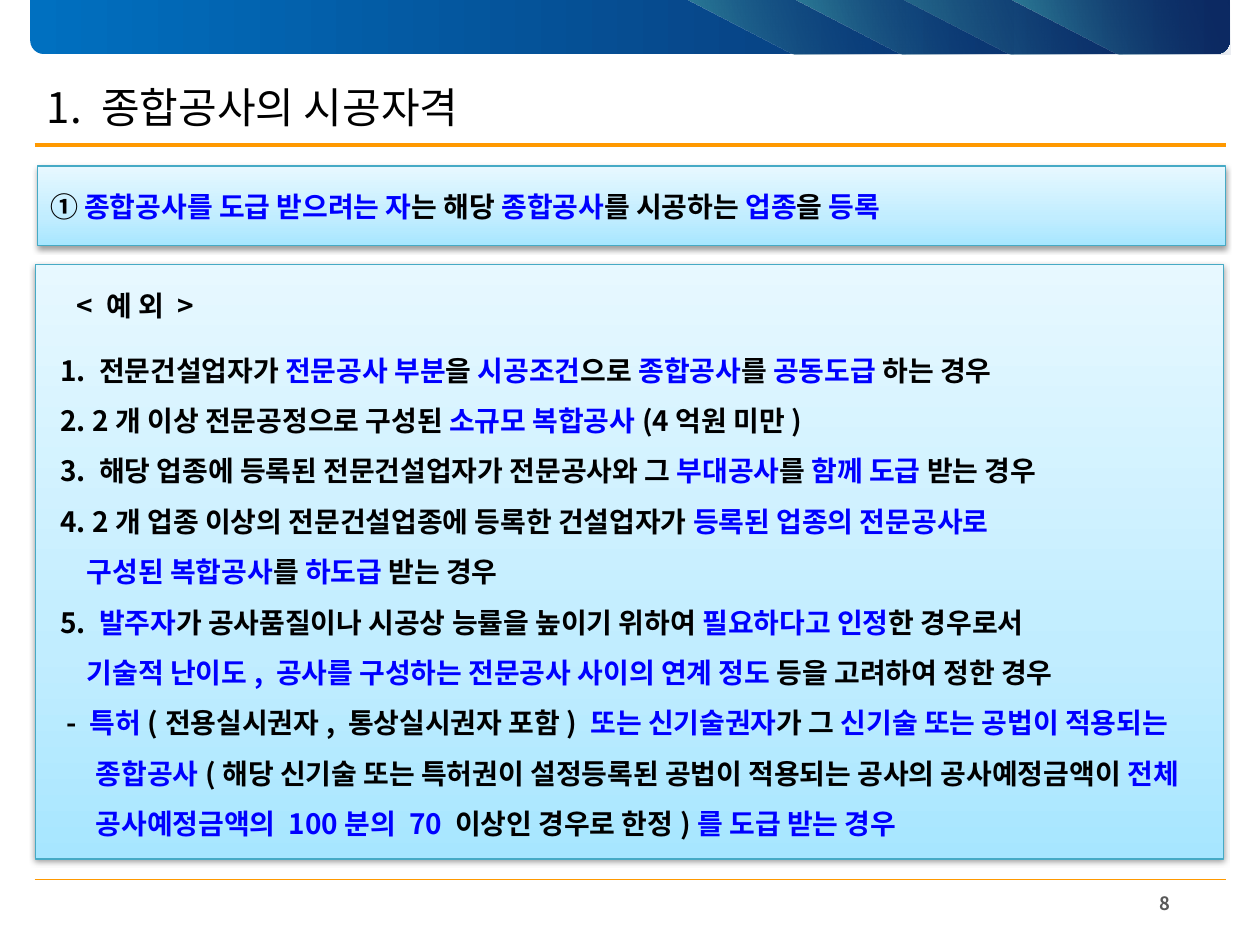
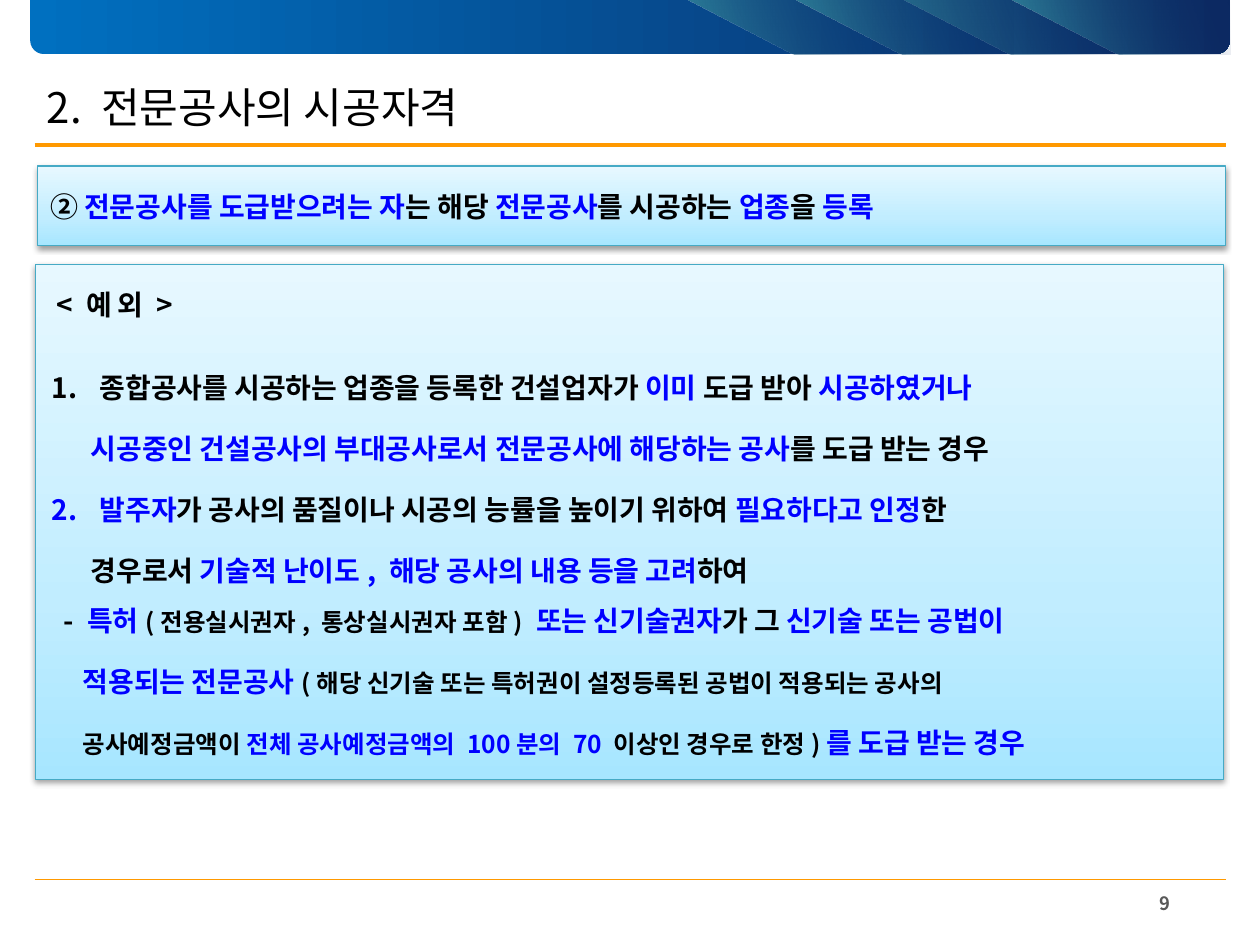
"""Build two slides on contractor qualifications, with a shared frame and text panels."""
from lxml.etree import SubElement
from pptx import Presentation
from pptx.dml.color import RGBColor
from pptx.enum.shapes import MSO_CONNECTOR, MSO_SHAPE
from pptx.enum.text import MSO_ANCHOR, MSO_AUTO_SIZE, PP_ALIGN
from pptx.oxml.ns import qn
from pptx.util import Cm, Pt

FONT = "Noto Sans CJK KR"
BLACK, BLUE, GREY, ORANGE, PANEL_EDGE = "000000", "0000FF", "595959", "FF9900", "46AAC5"
BAND_STOPS = [(0, "0070C0", 100), (100, "0C2962", 100)]
STRIPE_STOPS = [(0, "31859C", 100), (100, "0C2962", 0)]
PANEL_STOPS = [(0, "A7E6FF", 100), (35, "C1EDFF", 100), (100, "E7F8FF", 100)]

BAND_BOX = (0.61, 0, 24.18, 1.09)
STRIPE_LEFT, STRIPE_STEP, STRIPE_WIDTH = 13.84, 2.18, 4.42
STRIPE_ORDER = (0, 2, 3, 1)
RULES = [(2.92, 2), (17.73, 0.75)]
RULE_LEFT, RULE_RIGHT = 0.7, 24.71
TITLE_BOX = (0.69, 1.37, 20.24, 1.55)
HEADING_BOX = (0.76, 3.35, 23.95, 1.6)
PANEL_LEFT, PANEL_TOP, PANEL_WIDTH = 0.71, 5.33, 23.95
LABEL_SIZE = (4.19, 0.94)
NUMBER_BOX = (21.89, 17.83, 3.2, 0.74)
LINE_PITCH = 28.8

INDENTS = {
    "item": (0.26, 0),
    "number": (0.97, -0.97),
    "more": (0.79, 0),
    "dash": (0.97, -0.59),
    "short dash": (0.63, -0.38),
    "short more": (0.63, 0),
}

# "|" switches between black and blue, "^" marks a smaller run
SLIDES = [
    {
        "page": "8",
        "title": "1. 종합공사의 시공자격",
        "heading": "① |종합공사를 도급 받으려는 자|는 해당 |종합공사|를 시공하는 |업종|을 |등록",
        "label_at": (1.3, 5.69),
        "panel_height": 11.99,
        "insets": (0.25, 1.45),
        "gap": 0,
        "lines": [
            ("item", "1. 전문건설업자가 |전문공사 부분|을 |시공조건|으로 |종합공사|를 |공동도급| 하는 경우"),
            ("item", "2. 2개 이상 전문공정으로 구성된 |소규모 복합공사|(4억원 미만)"),
            ("item", "3. 해당 업종에 등록된 전문건설업자가 전문공사와 그 |부대공사|를 |함께 도급 |받는 경우"),
            ("item", "4. 2개 업종 이상의 전문건설업종에 등록한 건설업자가 |등록된 업종의 전문공사로"),
            ("more", "|구성된 복합공사|를 |하도급| 받는 경우"),
            ("item", "5. |발주자|가 공사품질이나 시공상 능률을 높이기 위하여 |필요하다고 인정|한 경우로서"),
            ("more", "|기술적 난이도, 공사를 구성하는 전문공사 사이의 연계 정도| 등을 고려하여 정한 경우"),
            ("dash", "- |특허|(전용실시권자, 통상실시권자 포함) |또는 신기술권자|가 그 "
                     "|신기술 또는 공법이 적용되는 종합공사|(해당 신기술 또는 특허권이 설정등록된 "
                     "공법이 적용되는 공사의 공사예정금액이 |전체 공사예정금액의 100분의 70 "
                     "|이상인 경우로 한정)|를 도급 받는 경우"),
        ],
    },
    {
        "page": "9",
        "title": "2. 전문공사의 시공자격",
        "heading": "② |전문공사를 도급받으려는 자|는 해당 |전문공사|를 시공하는 |업종|을 |등록",
        "label_at": (0.89, 5.66),
        "panel_height": 10.39,
        "insets": (0.33, 1.8),
        "gap": 6,
        "lines": [
            ("number", "종합공사를 시공하는 업종을 등록한 건설업자가 |이미| 도급 받아 |시공하였거나"),
            ("more", "|시공중인 건설공사의 부대공사로서 전문공사에 해당하는 공사|를 도급 받는 경우"),
            ("number", "|발주자|가 공사의 품질이나 시공의 능률을 높이기 위하여 |필요하다고 인정|한"),
            ("more", "경우로서 |기술적 난이도, 해당 공사의 내용 등을 고려|하여"),
            ("short dash", "- |특허|^(전용실시권자, 통상실시권자 포함)| 또는 신기술권자|가 그 |신기술 또는 공법이"),
            ("short more", "|적용되는 전문공사|^(해당 신기술 또는 특허권이 설정등록된 공법이 적용되는 공사의"),
            ("short more", "^공사예정금액이 |^전체 공사예정금액의 100분의 70 |^이상인 경우로 한정)|를 도급 받는 경우"),
        ],
    },
]


def rgb(value):
    return RGBColor.from_string(value)


def cm_box(box):
    return [Cm(length) for length in box]


def place(shape, box):
    shape.left, shape.top, shape.width, shape.height = cm_box(box)


def fill_gradient(shape, stops, angle):
    shape.fill.gradient()
    shape.fill.gradient_angle = angle
    stop_list = next(shape.element.spPr.iter(qn("a:gsLst")))
    for old_stop in list(stop_list):
        stop_list.remove(old_stop)
    for position, color, opacity in stops:
        stop = SubElement(stop_list, qn("a:gs"), pos=str(position * 1000))
        color_element = SubElement(stop, qn("a:srgbClr"), val=color)
        if opacity < 100:
            SubElement(color_element, qn("a:alpha"), val=str(opacity * 1000))


def style_panel(shape):
    fill_gradient(shape, PANEL_STOPS, 90)
    shape.line.color.rgb = rgb(PANEL_EDGE)
    shape.line.width = Pt(0.75)
    shape.shadow.inherit = False
    effects = shape.element.spPr.find(qn("a:effectLst"))
    shadow = SubElement(effects, qn("a:outerShdw"), blurRad=str(Pt(3.1)), dist=str(Pt(1.6)),
                        dir="5400000", rotWithShape="0")
    color_element = SubElement(shadow, qn("a:srgbClr"), val=BLACK)
    SubElement(color_element, qn("a:alpha"), val="38000")


def format_run(run, size, color=BLACK, bold=True):
    run.font.size, run.font.bold, run.font.name = Pt(size), bold, FONT
    run.font.color.rgb = rgb(color)
    SubElement(run.font._element, qn("a:ea"), typeface=FONT)


def write_marked(paragraph, text):
    for index, part in enumerate(text.split("|")):
        if part:
            run = paragraph.add_run()
            run.text = part.lstrip("^")
            format_run(run, 14 if part.startswith("^") else 16, BLUE if index % 2 else BLACK)


def write_single(shape, text, size, color=BLACK, bold=True, align=PP_ALIGN.LEFT):
    frame = shape.text_frame
    frame.text = text
    frame.word_wrap = True
    frame.auto_size = MSO_AUTO_SIZE.NONE
    frame.vertical_anchor = MSO_ANCHOR.MIDDLE
    frame.paragraphs[0].alignment = align
    format_run(frame.paragraphs[0].runs[0], size, color, bold)


def set_list_format(paragraph, style, number):
    margin, indent = INDENTS[style]
    properties = paragraph._p.get_or_add_pPr()
    properties.set("marL", str(Cm(margin)))
    properties.set("indent", str(Cm(indent)))
    if style == "number":
        SubElement(properties, qn("a:buFont"), typeface=FONT)
        SubElement(properties, qn("a:buAutoNum"), type="arabicPeriod", startAt=str(number))
    else:
        SubElement(properties, qn("a:buNone"))


def draw_frame(slide, page):
    shapes = slide.shapes
    for height, width in RULES:
        rule = shapes.add_connector(MSO_CONNECTOR.STRAIGHT,
                                    *cm_box((RULE_LEFT, height, RULE_RIGHT, height)))
        rule.line.color.rgb = rgb(ORANGE)
        rule.line.width = Pt(width)
        SubElement(rule.element.spPr, qn("a:effectLst"))
    band = shapes.add_shape(MSO_SHAPE.ROUND_2_SAME_RECTANGLE, *cm_box(BAND_BOX))
    band.adjustments[0], band.adjustments[1] = 0, 0.25
    decorations = [(band, BAND_STOPS, 0)]
    band_height = BAND_BOX[3]
    for step in STRIPE_ORDER:
        left = STRIPE_LEFT + step * STRIPE_STEP
        right = left + STRIPE_WIDTH
        builder = shapes.build_freeform(Cm(left), 0)
        corners = [(right, 0), (right, band_height), (left + STRIPE_STEP, band_height)]
        builder.add_line_segments([cm_box(corner) for corner in corners])
        decorations.append((builder.convert_to_shape(), STRIPE_STOPS, 20))
    for shape, stops, angle in decorations:
        fill_gradient(shape, stops, angle)
        shape.line.fill.background()
        shape.shadow.inherit = False
    write_single(shapes.add_textbox(*cm_box(NUMBER_BOX)), page, 10.5, GREY, align=PP_ALIGN.CENTER)


def draw_heading(slide, text):
    heading = slide.shapes.add_shape(MSO_SHAPE.RECTANGLE, *cm_box(HEADING_BOX))
    style_panel(heading)
    heading.text_frame.vertical_anchor = MSO_ANCHOR.MIDDLE
    paragraph = heading.text_frame.paragraphs[0]
    paragraph.alignment = PP_ALIGN.LEFT
    write_marked(paragraph, text)


def fill_exceptions(body, content):
    place(body, (PANEL_LEFT, PANEL_TOP, PANEL_WIDTH, content["panel_height"]))
    style_panel(body)
    frame = body.text_frame
    frame.auto_size = MSO_AUTO_SIZE.NONE
    frame.vertical_anchor = MSO_ANCHOR.TOP
    frame.margin_left, frame.margin_top = cm_box(content["insets"])
    number = 0
    for index, (style, text) in enumerate(content["lines"]):
        paragraph = frame.add_paragraph() if index else frame.paragraphs[0]
        number += style == "number"
        set_list_format(paragraph, style, number)
        paragraph.line_spacing = Pt(LINE_PITCH)
        paragraph.space_before = Pt(content["gap"] if index and "dash" not in style else 0)
        write_marked(paragraph, text)


def build_slide(presentation, content):
    slide = presentation.slides.add_slide(presentation.slide_layouts[1])
    title, body = slide.placeholders
    draw_frame(slide, content["page"])
    place(title, TITLE_BOX)
    write_single(title, content["title"], 24, bold=False)
    draw_heading(slide, content["heading"])
    fill_exceptions(body, content)
    label = slide.shapes.add_textbox(*cm_box(content["label_at"] + LABEL_SIZE))
    write_single(label, "< 예 외 >", 16)


def main():
    presentation = Presentation()
    presentation.slide_width, presentation.slide_height = Cm(25.4), Cm(19.05)
    for content in SLIDES:
        build_slide(presentation, content)
    presentation.save("out.pptx")


if __name__ == "__main__":
    main()
